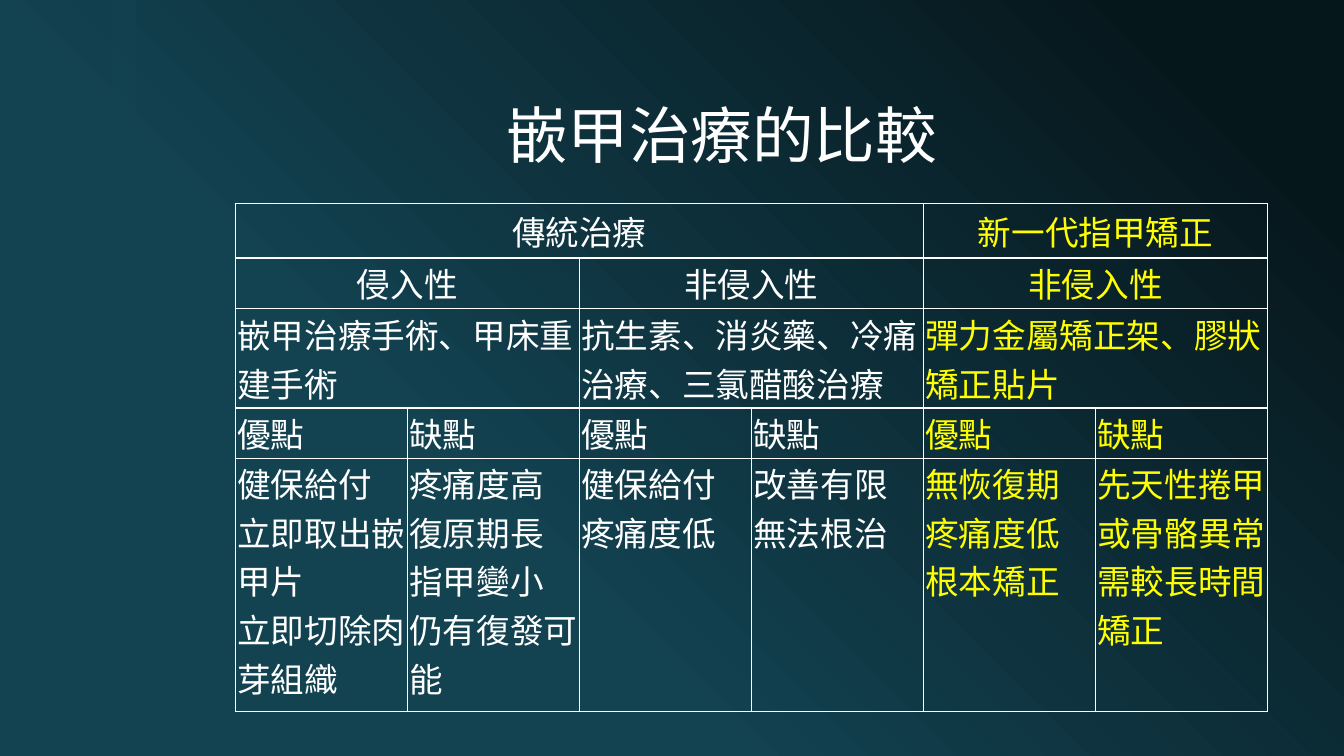
from lxml.etree import SubElement as Sub
from pptx import Presentation
from pptx.dml.color import RGBColor as Rgb
from pptx.enum.shapes import MSO_SHAPE as Shape
from pptx.enum.text import MSO_ANCHOR as Anchor, MSO_AUTO_SIZE as Fit, PP_ALIGN as Align
from pptx.oxml.ns import qn
from pptx.util import Cm, Pt

HUES = {"dark": "06171C", "teal": "134251", "white": "FFFFFF", "gold": "FFFF00"}
SANS = "Noto Sans CJK SC"
SERIF = "Times New Roman"
INSETS = {"margin_left": Cm(0.05), "margin_right": Cm(0.05),
          "margin_top": 0, "margin_bottom": 0}
COLS = 6
NEW = 4
ROWS = [
    (1.37, Align.CENTER, Anchor.MIDDLE, {0: "傳統治療", 4: "新一代指甲矯正"}),
    (1.27, Align.CENTER, Anchor.MIDDLE, {0: "侵入性", 2: "非侵入性", 4: "非侵入性"}),
    (2.51, Align.LEFT, Anchor.MIDDLE, {
        0: "嵌甲治療手術、甲床重建手術",
        2: "抗生素、消炎藥、冷痛治療、三氯醋酸治療",
        4: "彈力金屬矯正架、膠狀矯正貼片"}),
    (1.27, Align.LEFT, Anchor.MIDDLE,
     {col: ("優點", "缺點")[col % 2] for col in range(COLS)}),
    (6.38, Align.LEFT, Anchor.TOP, dict(enumerate([
        "健保給付\n立即取出嵌甲片\n立即切除肉芽組織",
        "疼痛度高\n復原期長\n指甲變小\n仍有復發可能",
        "健保給付\n疼痛度低",
        "改善有限\n無法根治",
        "無恢復期\n疼痛度低\n根本矯正",
        "先天性捲甲或骨骼異常需較長時間矯正"]))),
]


def hue(name):
    return Rgb.from_string(HUES[name])


def apply(item, form):
    for key, value in form.items():
        setattr(item, key, value)


def write(frame, text, align, size, face, tint):
    para = frame.paragraphs[0]
    para.text = text
    para.alignment = align
    for run in para.runs:
        apply(run.font, {"size": Pt(size), "name": face, "bold": False})
        run.font.color.rgb = hue(tint)
        Sub(run.font._element, qn("a:ea"), typeface=SANS)
    return para


def paint(slide):
    fill = slide.background.fill
    fill.gradient()
    fill.gradient_angle = 225
    for stop, (name, place) in zip(fill.gradient_stops, [("dark", 0.1), ("teal", 0.65)]):
        stop.color.rgb = hue(name)
        stop.position = place


def add_band(slide):
    band = slide.shapes.add_shape(Shape.RECTANGLE, Cm(2.79), 0, Cm(0.64), Cm(19.05))
    band.shadow.inherit = False
    band.line.fill.background()
    band.fill.solid()
    band.fill.fore_color.rgb = hue("teal")
    tint = band._element.spPr.find(qn("a:solidFill"))[0]
    Sub(tint, qn("a:alpha"), val="60000")


def add_title(slide, text):
    title = slide.shapes.title
    apply(title, {"left": Cm(5.49), "top": Cm(1.07), "width": Cm(25.4), "height": Cm(3.38)})
    frame = title.text_frame
    apply(frame, {"vertical_anchor": Anchor.BOTTOM, "auto_size": Fit.NONE, "word_wrap": True})
    write(frame, text, Align.CENTER, 44, SANS, "white").line_spacing = 0.9


def frame_cell(cell):
    props = cell._tc.get_or_add_tcPr()
    for side in ("lnL", "lnR", "lnT", "lnB"):
        line = Sub(props, qn("a:" + side), w=str(Pt(1)))
        Sub(Sub(line, qn("a:solidFill")), qn("a:srgbClr"), val=HUES["white"])
    cell.fill.background()


def add_grid(slide):
    tall = sum(row[0] for row in ROWS)
    grid = slide.shapes.add_table(len(ROWS), COLS, Cm(5.93), Cm(5.13),
                                  Cm(26.01), Cm(tall)).table
    apply(grid, {"first_row": False, "horz_banding": False})
    for row, (high, align, anchor, texts) in enumerate(ROWS):
        grid.rows[row].height = Cm(high)
        for col in range(COLS):
            cell = grid.cell(row, col)
            apply(cell, {**INSETS, "vertical_anchor": anchor})
            frame_cell(cell)
        ends = [*texts, COLS][1:]
        for (col, text), end in zip(texts.items(), ends):
            cell = grid.cell(row, col)
            if end - col > 1:
                cell.merge(grid.cell(row, end - 1))
            tint = "gold" if col >= NEW else "white"
            write(cell.text_frame, text, align, 24, SERIF, tint)


def main():
    deck = Presentation()
    apply(deck, {"slide_width": Cm(33.87), "slide_height": Cm(19.05)})
    slide = deck.slides.add_slide(deck.slide_layouts[5])
    paint(slide)
    add_band(slide)
    add_title(slide, "嵌甲治療的比較")
    add_grid(slide)
    deck.save("out.pptx")


if __name__ == "__main__":
    main()
